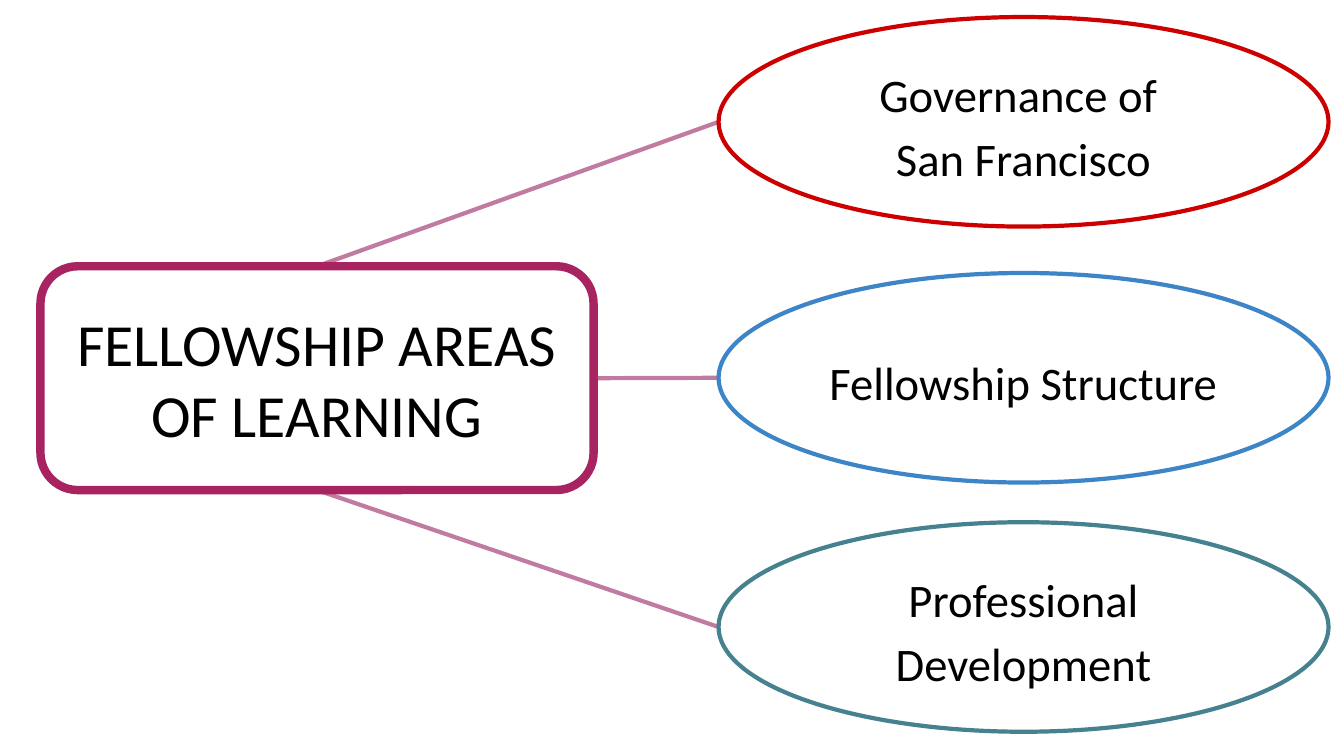
from pptx import Presentation
from pptx.dml.color import RGBColor
from pptx.enum.shapes import MSO_CONNECTOR as Connector, MSO_SHAPE as Shape
from pptx.enum.text import MSO_ANCHOR as Anchor, PP_ALIGN as Align
from pptx.oxml.ns import qn
from pptx.util import Cm, Pt
from lxml.etree import SubElement

COLORS = {
    "text": "000000",
    "link": "C27BA0",
    "hub": "A82461",
    "governance": "CC0000",
    "structure": "3D85C6",
    "development": "45818E",
}


class MindMap:
    """Holds the text style and the slide being drawn."""

    font_name = "Calibri"
    inset = Cm(0.33)

    def __init__(self, deck):
        self.slide = deck.slides.add_slide(deck.slide_layouts[6])

    def link(self, start, end):
        points = [Cm(value) for value in (*start, *end)]
        line = self.slide.shapes.add_connector(Connector.STRAIGHT, *points)
        line.line.color.rgb = RGBColor.from_string(COLORS["link"])
        line.line.width = Pt(3)
        SubElement(line._element.spPr, qn("a:effectLst"))

    def node(self, kind, place, color, weight, lines, size, spacing=None, after=None):
        box = self.slide.shapes.add_shape(kind, *(Cm(value) for value in place))
        box.shadow.inherit = False
        box.fill.background()
        box.line.color.rgb = RGBColor.from_string(COLORS[color])
        box.line.width = Pt(weight)

        frame = box.text_frame
        frame.word_wrap = True
        frame.vertical_anchor = Anchor.MIDDLE
        frame.margin_left = frame.margin_right = self.inset
        frame.margin_top = frame.margin_bottom = self.inset
        for index, text in enumerate(lines):
            para = frame.add_paragraph() if index else frame.paragraphs[0]
            para.alignment = Align.CENTER
            para.line_spacing = spacing
            para.space_after = after
            span = para.add_run()
            span.text = text
            span.font.name = self.font_name
            span.font.size = Pt(size)
            span.font.color.rgb = RGBColor.from_string(COLORS["text"])
        return box


def main():
    deck = Presentation()
    deck.slide_width, deck.slide_height = Cm(33.87), Cm(19.05)
    mind_map = MindMap(deck)

    # Layout of the hub and the column of areas
    hub_left, hub_top, hub_width, hub_height = hub = (1.02, 6.71, 13.94, 5.64)
    area_left, area_width, area_height = 18.11, 15.37, 5.28
    hub_center = hub_left + hub_width / 2
    hub_exits = [
        (hub_center, hub_top),
        (hub_left + hub_width, hub_top + hub_height / 2),
        (hub_center, hub_top + hub_height),
    ]
    areas = [
        ("governance", 0.43, ["Governance of ", "San Francisco"], None),
        ("structure", 6.88, ["Fellowship Structure"], Pt(16)),
        ("development", 13.16, ["Professional Development"], Pt(16)),
    ]

    # Links lie behind the shapes
    for hub_exit, (_, top, _, _) in zip(hub_exits, areas):
        mind_map.link(hub_exit, (area_left, top + area_height / 2))

    # Hub
    mind_map.node(Shape.ROUNDED_RECTANGLE, hub, "hub", 6,
                  ["FELLOWSHIP AREAS OF LEARNING"], 42.7)

    # Areas of learning
    for color, top, lines, after in areas:
        place = (area_left, top, area_width, area_height)
        mind_map.node(Shape.OVAL, place, color, 3, lines, 33.3, 1.15, after)

    deck.save("out.pptx")


if __name__ == "__main__":
    main()
